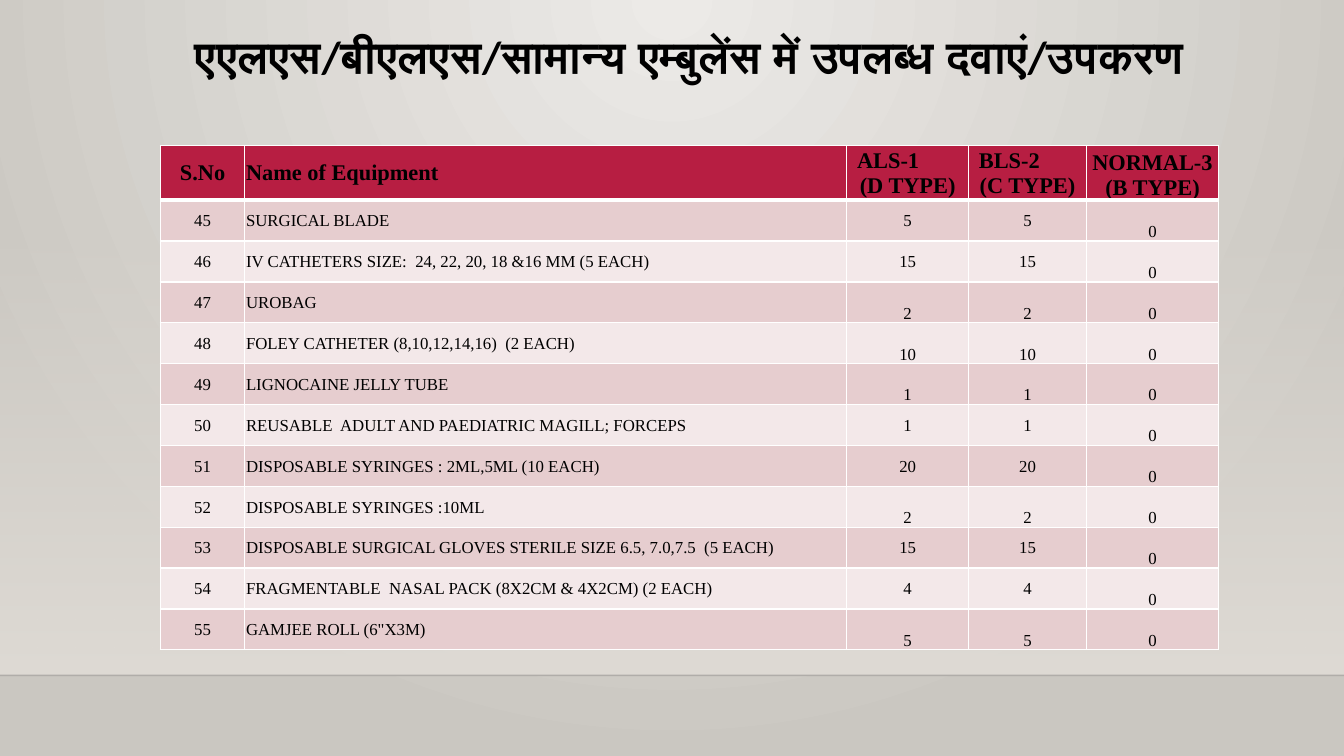
from lxml.etree import SubElement
from pptx import Presentation
from pptx.dml.color import RGBColor
from pptx.enum.shapes import MSO_CONNECTOR, MSO_SHAPE
from pptx.enum.text import MSO_ANCHOR, PP_ALIGN
from pptx.oxml.ns import qn
from pptx.util import Cm, Pt

TITLE = "एएलएस/बीएलएस/सामान्य एम्बुलेंस में उपलब्ध दवाएं/उपकरण"
HEAD = ["S.No", "Name of Equipment", "ALS-1\n(D TYPE)", "BLS-2\n(C TYPE)",
        "NORMAL-3\n(B TYPE)"]
FIRST = 45
# name, count in ALS and in BLS, whether those counts sit at the cell bottom
ITEMS = [
    ("SURGICAL BLADE", 5, False),
    ("IV CATHETERS SIZE:  24, 22, 20, 18 &16 MM (5 EACH)", 15, False),
    ("UROBAG", 2, True),
    ("FOLEY CATHETER (8,10,12,14,16)  (2 EACH)", 10, True),
    ("LIGNOCAINE JELLY TUBE", 1, True),
    ("REUSABLE  ADULT AND PAEDIATRIC MAGILL; FORCEPS", 1, False),
    ("DISPOSABLE SYRINGES : 2ML,5ML (10 EACH)", 20, False),
    ("DISPOSABLE SYRINGES :10ML", 2, True),
    ("DISPOSABLE SURGICAL GLOVES STERILE SIZE 6.5, 7.0,7.5  (5 EACH)", 15, False),
    ("FRAGMENTABLE  NASAL PACK (8X2CM & 4X2CM) (2 EACH)", 4, False),
    ('GAMJEE ROLL (6"X3M)', 5, True),
]
COLS = [2.13, 15.17, 3.07, 2.97, 3.33]
HEAD_H, ROW_H = 1.29, 1.03
WIDE, HIGH = 33.87, 19.05
LEFT, TOP = 4.04, 3.66
FLOOR = 17.02
RED, DARK, PALE = "B71E42", "E6CDCF", "F3E8E9"


def color(code):
    return RGBColor.from_string(code)


def blend(fill, start, end):
    fill.gradient()
    for stop, code in zip(fill.gradient_stops, (start, end)):
        stop.color.rgb = color(code)


def fade(clr, amount):
    """Set the opacity of a colour element, in percent."""
    SubElement(clr, qn("a:alpha"), val=str(amount * 1000))


def write(par, text, size, font, bold):
    run = par.add_run()
    run.text = text
    run.font.size = Pt(size)
    run.font.name = font
    run.font.bold = bold
    run.font.color.rgb = color("000000")


def border(cell, widths):
    """Draw white edges; widths are points for left, right, top, bottom."""
    props = cell._tc.get_or_add_tcPr()
    for side, width in zip("LRTB", widths):
        line = SubElement(props, qn(f"a:ln{side}"), w=str(Pt(width)))
        fill = SubElement(line, qn("a:solidFill"))
        SubElement(fill, qn("a:srgbClr"), val="FFFFFF")


def paint_back(slide):
    blend(slide.background.fill, "ECEAE7", "CAC7C1")
    lin = slide._element.find(".//" + qn("a:lin"))
    grad = lin.getparent()
    grad.remove(lin)
    ring = SubElement(grad, qn("a:path"), path="circle")
    SubElement(ring, qn("a:fillToRect"), l="43000", t="0", r="43000", b="100000")

    wall = slide.shapes.add_shape(MSO_SHAPE.RECTANGLE, 0, Cm(5.61),
                                  Cm(WIDE), Cm(FLOOR - 5.61))
    wall.shadow.inherit = False
    wall.line.fill.background()
    blend(wall.fill, "DFDBD5", "DFDBD5")
    wall.fill.gradient_angle = 270
    fade(wall._element.find(".//" + qn("a:srgbClr")), 0)

    edge = slide.shapes.add_connector(MSO_CONNECTOR.STRAIGHT, 0, Cm(FLOOR),
                                      Cm(WIDE), Cm(FLOOR))
    edge.line.width = Pt(1)
    edge.line.color.rgb = color("000001")
    fade(edge._element.find(".//" + qn("a:srgbClr")), 20)
    SubElement(edge._element.spPr, qn("a:effectLst"))


def add_title(slide):
    box = slide.shapes.add_textbox(Cm(LEFT), Cm(0.74), Cm(sum(COLS)), Cm(2.92))
    box.text_frame.word_wrap = True
    par = box.text_frame.paragraphs[0]
    par.alignment = PP_ALIGN.CENTER
    par.line_spacing = 0.9
    write(par, TITLE, 32, "Calibri", True)


def fill_cell(cell, text, row, col, low):
    head = row == 0
    border(cell, (1, 1, 3 if row == 1 else 1, 3 if head else 1))
    cell.fill.solid()
    cell.fill.fore_color.rgb = color(RED if head else DARK if row % 2 else PALE)
    cell.margin_left = cell.margin_right = cell.margin_top = Cm(0.03)
    cell.margin_bottom = 0
    cell.vertical_anchor = MSO_ANCHOR.BOTTOM if low else MSO_ANCHOR.MIDDLE
    frame = cell.text_frame
    for i, line in enumerate(text.split("\n")):
        par = frame.add_paragraph() if i else frame.paragraphs[0]
        par.alignment = PP_ALIGN.LEFT if col == 1 else PP_ALIGN.CENTER
        if head and col in (2, 3) and i == 0:
            par.alignment = PP_ALIGN.LEFT
            par._p.get_or_add_pPr().set("marL", str(Cm(0.23)))
        write(par, line, 16 if head else 12, "Times New Roman", head)


def add_kit(slide):
    rows = [(HEAD, False)]
    for num, (name, count, low) in enumerate(ITEMS, FIRST):
        rows.append(([str(num), name, str(count), str(count), "0"], low))
    high = HEAD_H + ROW_H * len(ITEMS)
    table = slide.shapes.add_table(len(rows), len(COLS), Cm(LEFT), Cm(TOP),
                                   Cm(sum(COLS)), Cm(high)).table
    for col, width in enumerate(COLS):
        table.columns[col].width = Cm(width)
    for row, (texts, low) in enumerate(rows):
        table.rows[row].height = Cm(ROW_H if row else HEAD_H)
        for col, text in enumerate(texts):
            fill_cell(table.cell(row, col), text, row, col,
                      col == 4 or (low and col > 1))


def main():
    deck = Presentation()
    deck.slide_width, deck.slide_height = Cm(WIDE), Cm(HIGH)
    slide = deck.slides.add_slide(deck.slide_layouts[6])
    paint_back(slide)
    add_title(slide)
    add_kit(slide)
    deck.save("out.pptx")


if __name__ == "__main__":
    main()
